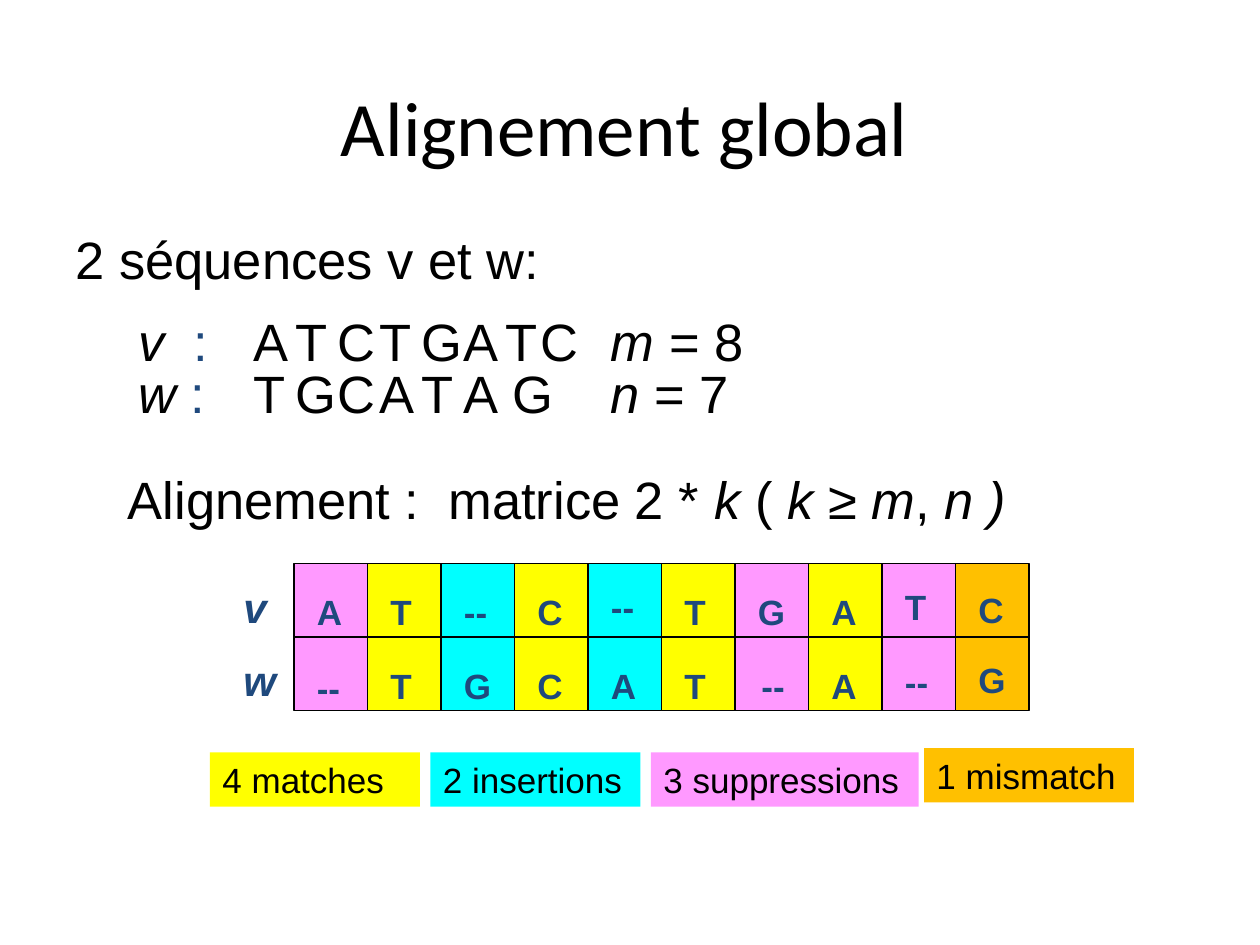
from pptx import Presentation
from pptx.dml.color import RGBColor
from pptx.enum import shapes, text
from pptx.util import Pt

BLACK, NAVY = "000000", "1F497D"
YELLOW, CYAN, PINK, ORANGE = "FFFF00", "00FFFF", "FF99FF", "FFC000"


def color(value):
    return RGBColor.from_string(value)


def write(frame, spans, size, font="Arial", bold=False):
    """Fill a frame with one paragraph of (wording, italic, colour) spans."""
    frame.word_wrap = True
    frame.auto_size = text.MSO_AUTO_SIZE.NONE
    para = frame.paragraphs[0]
    for wording, italic, ink in spans:
        span = para.add_run()
        span.text = wording
        span.font.size, span.font.name = Pt(size), font
        span.font.bold, span.font.italic = bold, italic
        span.font.color.rgb = color(ink)
    return para


def add_label(page, box, spans, size, bold=False):
    label = page.shapes.add_textbox(*map(Pt, box))
    write(label.text_frame, spans, size, bold=bold).alignment = text.PP_ALIGN.LEFT


def add_rect(page, box, fill, line=None):
    rect = page.shapes.add_shape(shapes.MSO_SHAPE.RECTANGLE, *map(Pt, box))
    rect.shadow.inherit = False
    rect.fill.solid()
    rect.fill.fore_color.rgb = color(fill)
    if line:
        rect.line.color.rgb = color(line)
        rect.line.width = Pt(0.75)
    else:
        rect.line.fill.background()
    return rect


def add_title(page, box, wording):
    title = page.shapes.title
    title.left, title.top, title.width, title.height = map(Pt, box)
    title.text_frame.vertical_anchor = text.MSO_ANCHOR.MIDDLE
    para = write(title.text_frame, [(wording, False, BLACK)], 44, "Calibri")
    para.alignment = text.PP_ALIGN.CENTER


def add_sequence(page, box, name, letters, last_shift, size_name, size_value):
    """One line: name, evenly spaced letters and length of the sequence."""
    left, top, width, height = box
    pitch = 24
    add_label(page, (left, top, 66, height),
              [(name, True, BLACK), (":", False, NAVY)], 30)
    for index, letter in enumerate(letters):
        shift = last_shift if index == len(letters) - 1 else 0
        add_label(page, (left + 66 + index * pitch + shift, top, pitch, height),
                  [(letter, False, BLACK)], 30)
    add_label(page, (left + 270, top, width - 270, height),
              [(size_name, True, BLACK), (f" = {size_value}", False, BLACK)], 30)


def add_alignment(page, box, rows, fills, nudges):
    """Coloured grid of aligned letters, with the row names on its left."""
    left, top, width, height = box
    cell_width, cell_height = width / len(fills), height / len(rows)
    for row in range(len(rows)):
        for column, fill in enumerate(fills):
            add_rect(page, (left + column * cell_width, top + row * cell_height,
                            cell_width, cell_height), fill, BLACK)
    for row, (name, letters) in enumerate(rows):
        row_top = top + row * cell_height
        add_label(page, (left - 36, row_top + 6.5, 40, 36),
                  [(name, True, NAVY)], 24, bold=True)
        for column, letter in enumerate(letters):
            across, down = nudges.get((row, column), (0, 0))
            add_label(page, (left + column * cell_width + 6 + across,
                             row_top + 12 + down, 30, 31),
                      [(letter, False, NAVY)], 20, bold=True)


def add_legend(page, box, entries):
    left, top, _, height = box
    for wording, fill, offset, rise, width in entries:
        key = add_rect(page, (left + offset, top - rise, width, height), fill)
        para = write(key.text_frame, [(wording, False, BLACK)], 20)
        para.alignment = text.PP_ALIGN.LEFT


def main():
    deck = Presentation()
    deck.slide_width, deck.slide_height = Pt(720), Pt(540)
    page = deck.slides.add_slide(deck.slide_layouts[5])

    add_title(page, (36, 42, 642, 60), "Alignement global")

    # The two sequences
    add_label(page, (36, 126, 516, 43), [("2 séquences v et w:", False, BLACK)], 30)
    add_sequence(page, (72, 173, 390, 43), "v  ", "ATCTGATC", -4, "m", 8)
    add_sequence(page, (72, 203, 390, 43), "w ", "TGCATAG", 4, "n", 7)

    # Size of the alignment matrix: italic and upright spans alternate
    formula = ["Alignement :  matrice 2 * ", "k", " ( ", "k", " ≥ ", "m", ", ", "n )"]
    add_label(page, (66, 263.5, 624, 44),
              [(part, index % 2 == 1, BLACK) for index, part in enumerate(formula)], 30)

    # Alignment matrix
    rows = [("v", ["A", "T", "--", "C", "--", "T", "G", "A", "T", "C"]),
            ("w", ["--", "T", "G", "C", "A", "T", "--", "A", "--", "G"])]
    fills = [PINK, YELLOW, CYAN, YELLOW, CYAN, YELLOW, PINK, YELLOW, PINK, ORANGE]
    nudges = {(0, 4): (0, -3), (0, 8): (0, -3), (0, 9): (0, -1.5),
              (1, 0): (0, 1.5), (1, 6): (2, 0), (1, 8): (0, -2), (1, 9): (0, -3)}
    add_alignment(page, (168, 322, 420, 84), rows, fills, nudges)

    # Legend: wording, fill, offset, rise, width
    add_legend(page, (120, 430, 528, 31), [
        ("4 matches", YELLOW, 0, 0, 120),
        ("2 insertions", CYAN, 126, 0, 120),
        ("3 suppressions", PINK, 252, 0, 153),
        ("1 mismatch", ORANGE, 408, 2.5, 120)])

    deck.save("out.pptx")


if __name__ == "__main__":
    main()
